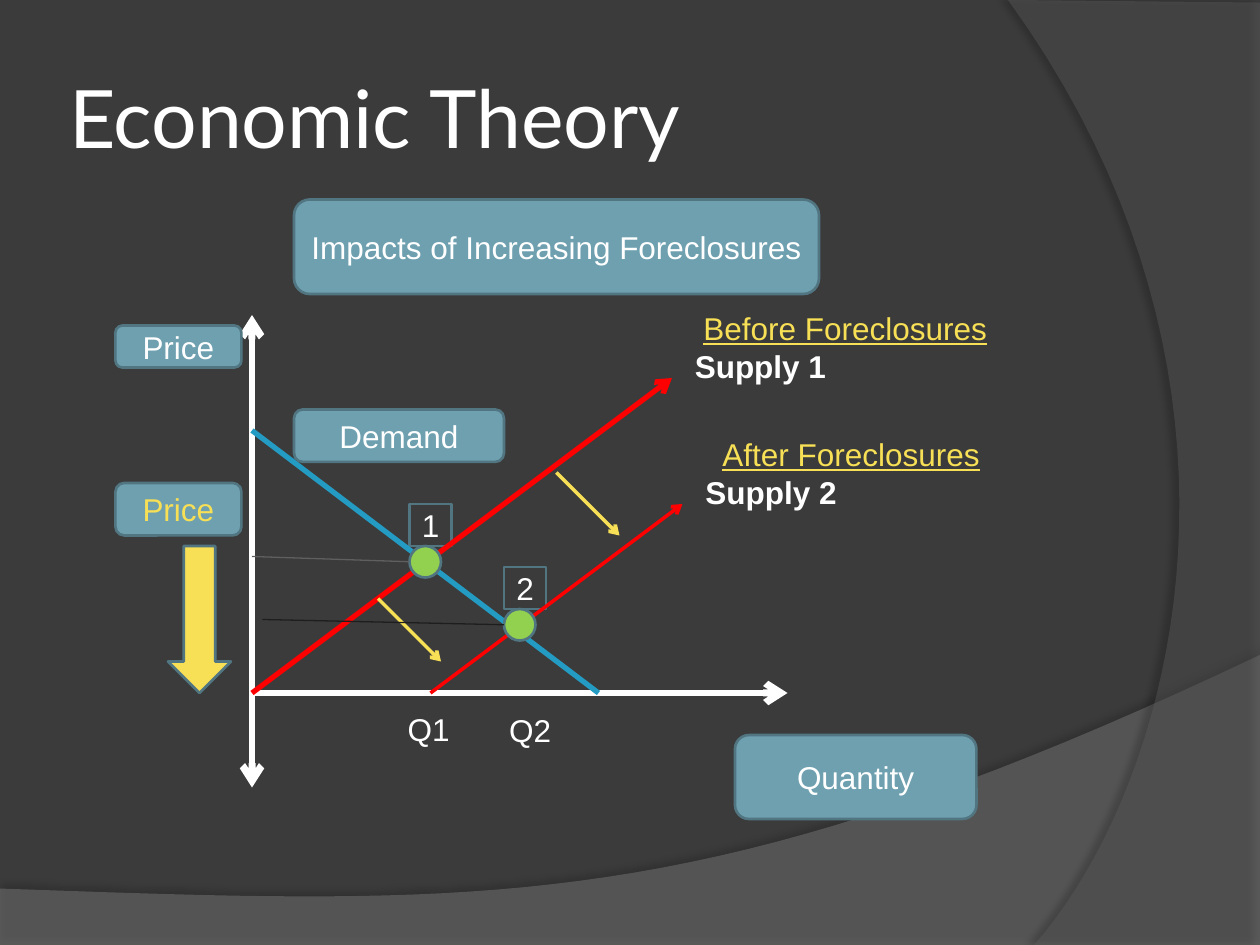
from dataclasses import dataclass

from lxml import etree
from pptx import Presentation
from pptx import util as u
from pptx.dml.color import RGBColor
from pptx.enum import shapes, text
from pptx.oxml import ns

PX = 9525  # EMU in one px, 96 px to the inch
WIDE, HIGH = 960, 720


@dataclass(frozen=True)
class Theme:
    back: str = "3B3B3B"
    white: str = "FFFFFF"
    gold: str = "F7DF56"
    teal: str = "6EA0B0"
    edge: str = "517682"
    red: str = "FF0000"
    blue: str = "239BC2"
    green: str = "92D050"
    wave: str = "7F7F7F"
    arc: str = "5E5E5E"
    guide1: str = "5F5F5F"
    guide2: str = "1E1E1E"
    head: str = "Lato"
    body: str = "Arial"
    big: int = 46
    base: int = 18


T = Theme()
KIND = shapes.MSO_SHAPE
MID, LEFT, RIGHT = text.PP_ALIGN.CENTER, text.PP_ALIGN.LEFT, text.PP_ALIGN.RIGHT


def px(*sizes):
    return [u.Emu(size * PX) for size in sizes]


def rgb(code):
    return RGBColor.from_string(code)


def node(parent, tag, **attrs):
    return etree.SubElement(parent, ns.qn(f"a:{tag}"), attrs)


def assign(item, values):
    for name, value in values.items():
        setattr(item, name, value)


def style(font, color=T.white, face=T.body, size=T.base, **more):
    assign(font, {"name": face, "size": u.Pt(size), **more})
    font.color.rgb = rgb(color)


def paint(shape, fill, edge=None):
    shape.shadow.inherit = False
    shape.fill.solid()
    shape.fill.fore_color.rgb = rgb(fill)
    if edge:
        shape.line.color.rgb = rgb(edge)
        shape.line.width = u.Pt(1.5)
    else:
        shape.line.fill.background()


def write(shape, lines, anchor=text.MSO_ANCHOR.MIDDLE):
    """Fill a shape from (words, alignment, indent in px, font values) rows."""
    frame = shape.text_frame
    assign(frame, {"word_wrap": True, "vertical_anchor": anchor})
    for row, (words, align, indent, font) in enumerate(lines):
        para = frame.add_paragraph() if row else frame.paragraphs[0]
        para.alignment = align
        if indent:
            para._p.get_or_add_pPr().set("marL", str(indent * PX))
        run = para.add_run()
        run.text = words
        style(run.font, **font)


def block(slide, kind, place, fill, edge=T.edge):
    shape = slide.shapes.add_shape(kind, *px(*place))
    paint(shape, fill, edge)
    return shape


def pill(slide, words, place, color=T.white):
    shape = block(slide, KIND.ROUNDED_RECTANGLE, place, T.teal)
    write(shape, [(words, MID, 0, {"color": color})])


def note(slide, place, words, supply, align, indent=0):
    shape = block(slide, KIND.RECTANGLE, place, T.back, None)
    write(shape, [(words, align, indent, {"color": T.gold, "underline": True}),
                  (supply, LEFT, 0, {"bold": True})])


def line(slide, ends, color, width, *tips):
    link = slide.shapes.add_connector(shapes.MSO_CONNECTOR.STRAIGHT, *px(*ends))
    link.line.color.rgb = rgb(color)
    link.line.width = u.Pt(width)
    for tip in tips:
        node(link.line._ln, tip, type="arrow")
    node(link.element.spPr, "effectLst")


def curve(start, pull1, pull2, end, steps=40):
    """Points along a cubic Bezier curve."""
    for step in range(steps + 1):
        t = step / steps
        parts = ((1 - t) ** 3, 3 * t * (1 - t) ** 2, 3 * t * t * (1 - t), t ** 3)
        yield tuple(round(sum(p * v for p, v in zip(parts, axis)) * PX)
                    for axis in zip(start, pull1, pull2, end))


def swoosh(slide, depth, bend, corners, fill, alpha, shade, dist, angle):
    """Place a see-through curved panel behind everything else."""
    points = [*curve(*bend), *(tuple(px(*corner)) for corner in corners)]
    build = slide.shapes.build_freeform(*points[0], scale=1.0)
    build.add_line_segments(points[1:], close=True)
    shape = build.convert_to_shape()
    paint(shape, fill)
    props = shape.element.spPr
    node(props.find(".//" + ns.qn("a:srgbClr")), "alpha", val=str(alpha * 1000))
    shadow = node(props.find(ns.qn("a:effectLst")), "outerShdw",
                  blurRad=str(u.Pt(4)), dist=str(u.Pt(dist)),
                  dir=str(angle * 60000), algn="ctr", rotWithShape="0")
    color = node(shadow, "srgbClr", val="000000")
    node(color, "alpha", val=str(shade * 1000))
    shape.element.getparent().insert(2 + depth, shape.element)


def decor(slide):
    slide.background.fill.solid()
    slide.background.fill.fore_color.rgb = rgb(T.back)
    swoosh(slide, 0, [(960, 499), (537, 700), (375, 690), (0, 677)],
           [(0, HIGH), (WIDE, HIGH)], T.wave, 45, 35, 3.5, 270)
    swoosh(slide, 1, [(788, 720), (898, 594), (977, 288), (768, 0)],
           [(WIDE, 2), (WIDE, HIGH)], T.arc, 40, 45, 4, 180)


def heading(slide, words):
    title = slide.shapes.title
    names = ("left", "top", "width", "height")
    assign(title, dict(zip(names, px(48, 29, 785, 120))))
    sides = ("left", "top", "right", "bottom")
    assign(title.text_frame, {f"margin_{side}": u.Inches(0.05) for side in sides})
    write(title, [(words, LEFT, 0, {"face": T.head, "size": T.big})])


def labels(slide):
    note(slide, (520, 232, 248, 64), "Before Foreclosures", "Supply 1", MID)
    note(slide, (528, 328, 256, 64), "After Foreclosures", "Supply 2", LEFT, 13)
    for words, left, top in (("1", 312, 384), ("2", 384, 432)):
        shape = block(slide, KIND.RECTANGLE, (left, top, 32, 32), T.back)
        write(shape, [(words, MID, 0, {})])
    for words, left, align, anchor in (
            ("Q1", 296, RIGHT, text.MSO_ANCHOR.TOP),
            ("Q2", 376, MID, text.MSO_ANCHOR.MIDDLE)):
        shape = block(slide, KIND.RECTANGLE, (left, 536, 56, 40), T.back, None)
        write(shape, [(words, align, 0, {})], anchor)


def graph(slide):
    for ends, color, width, *tips in (
            ((192, 240, 192, 600), T.white, 4, "headEnd", "tailEnd"),
            ((192, 528, 600, 528), T.white, 4, "tailEnd"),
            ((192, 528, 512, 288), T.red, 3, "tailEnd"),
            ((328, 528, 520, 384), T.red, 2, "tailEnd"),
            ((424, 360, 472, 408), T.gold, 2, "tailEnd"),
            ((288, 456, 336, 504), T.gold, 2, "tailEnd"),
            ((192, 328, 456, 528), T.blue, 3)):
        line(slide, ends, color, width, *tips)


def pills(slide):
    for args in (("Impacts of Increasing Foreclosures", (224, 152, 400, 72)),
                 ("Demand", (224, 312, 160, 40)),
                 ("Price", (88, 248, 96, 32)),
                 ("Price", (88, 368, 96, 40), T.gold),
                 ("Quantity", (560, 560, 184, 64))):
        pill(slide, *args)
    block(slide, KIND.DOWN_ARROW, (128, 416, 48, 112), T.gold)


def points(slide):
    for left, top, foot, color in ((312, 416, 192, T.guide1),
                                   (384, 464, 200, T.guide2)):
        block(slide, KIND.OVAL, (left, top, 24, 24), T.green)
        line(slide, (left, top + 12, foot, top + 8), color, 0.75)


def main():
    deck = Presentation()
    deck.slide_width, deck.slide_height = px(WIDE, HIGH)
    slide = deck.slides.add_slide(deck.slide_layouts[5])
    decor(slide)
    heading(slide, "Economic Theory")
    for part in (labels, graph, pills, points):
        part(slide)
    deck.save("out.pptx")


if __name__ == "__main__":
    main()
